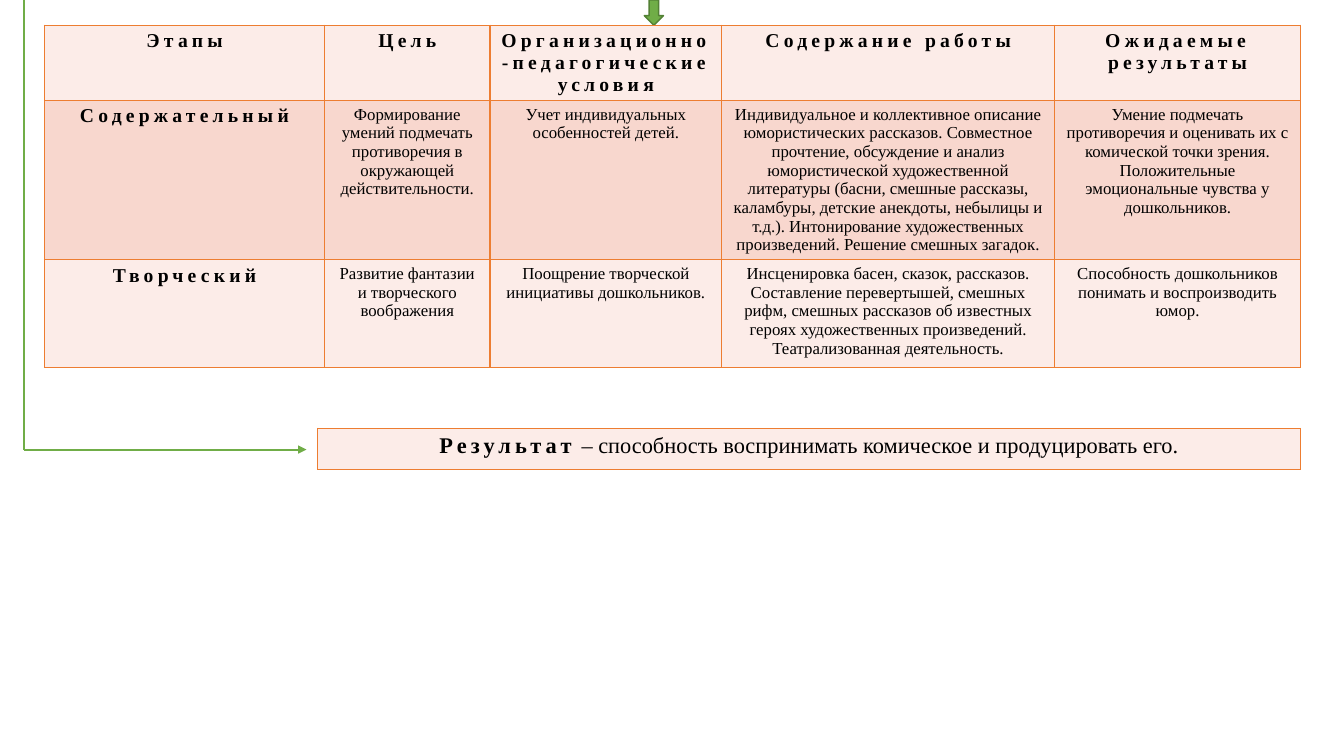
from pptx import Presentation
from pptx.dml.color import RGBColor
from pptx.enum.shapes import MSO_CONNECTOR as CONN, MSO_SHAPE as SHAPE
from pptx.enum.text import PP_ALIGN as ALIGN
from pptx.oxml.ns import qn
from pptx.util import Inches, Pt
from lxml.etree import SubElement

GREEN = RGBColor(0x70, 0xAD, 0x47)
DARK_GREEN = RGBColor(0x53, 0x81, 0x35)
ORANGE = RGBColor(0xED, 0x7D, 0x31)
PALE = RGBColor(0xFC, 0xEC, 0xE8)
PINK = RGBColor(0xF8, 0xD7, 0xCE)
BLACK = RGBColor(0, 0, 0)

STAGES = [
    ["Этапы", "Цель", "Организационно-педагогические условия",
     "Содержание работы", "Ожидаемые результаты"],
    ["Содержательный",
     "Формирование умений подмечать противоречия в окружающей действительности.",
     "Учет индивидуальных особенностей детей.",
     "Индивидуальное и коллективное описание юмористических рассказов. "
     "Совместное прочтение, обсуждение и анализ юмористической художественной "
     "литературы (басни, смешные рассказы, каламбуры, детские анекдоты, небылицы "
     "и т.д.). Интонирование художественных произведений. Решение смешных загадок.",
     "Умение подмечать противоречия и оценивать их с комической точки зрения. "
     "Положительные эмоциональные чувства у дошкольников."],
    ["Творческий",
     "Развитие фантазии и творческого воображения",
     "Поощрение творческой инициативы дошкольников.",
     "Инсценировка басен, сказок, рассказов. Составление перевертышей, смешных "
     "рифм, смешных рассказов об известных героях художественных произведений. "
     "Театрализованная деятельность.",
     "Способность дошкольников понимать и воспроизводить юмор."],
]


class SlideBuilder:
    font = "Times New Roman"

    def __init__(self, slide):
        self.s = slide

    def line(self, x1, y1, x2, y2, arrow=False):
        sp = self.s.shapes.add_connector(
            CONN.STRAIGHT, Inches(x1), Inches(y1), Inches(x2), Inches(y2))
        sp.line.color.rgb = GREEN
        sp.line.width = Pt(1.5)
        if arrow:
            SubElement(sp.line._get_or_add_ln(), qn("a:tailEnd"), type="triangle")
        SubElement(sp._element.spPr, qn("a:effectLst"))

    def down_arrow(self, x, y, w, h):
        sp = self.s.shapes.add_shape(
            SHAPE.DOWN_ARROW, Inches(x), Inches(y), Inches(w), Inches(h))
        sp.shadow.inherit = False
        sp.fill.solid()
        sp.fill.fore_color.rgb = GREEN
        sp.line.color.rgb = DARK_GREEN
        sp.line.width = Pt(1)

    def cell(self, cell, runs, fill):
        """Each run is (text, size, emphasised)."""
        tcPr = cell._tc.get_or_add_tcPr()
        for side in ("lnL", "lnR", "lnT", "lnB"):
            ln = SubElement(tcPr, qn(f"a:{side}"), w=str(Pt(1)))
            color = SubElement(ln, qn("a:solidFill"))
            SubElement(color, qn("a:srgbClr"), val=str(ORANGE))
        cell.fill.solid()
        cell.fill.fore_color.rgb = fill
        p = cell.text_frame.paragraphs[0]
        p.alignment = ALIGN.CENTER
        for text, size, strong in runs:
            r = p.add_run()
            r.text = text
            r.font.name = self.font
            r.font.size = Pt(size)
            r.font.bold = strong
            r.font.color.rgb = BLACK
            if strong:
                r.font._element.set("spc", "300")

    def table(self, x, y, widths, heights, rows, fills):
        frame = self.s.shapes.add_table(
            len(heights), len(widths), Inches(x), Inches(y),
            Inches(sum(widths)), Inches(sum(heights)))
        table = frame.table
        table.first_row = table.horz_banding = False
        for column, width in zip(table.columns, widths):
            column.width = Inches(width)
        for row, height, contents, fill in zip(table.rows, heights, rows, fills):
            row.height = Inches(height)
            for cell, runs in zip(row.cells, contents):
                self.cell(cell, runs, fill)


def main():
    prs = Presentation()
    prs.slide_width, prs.slide_height = Inches(13.33), Inches(7.5)
    b = SlideBuilder(prs.slides.add_slide(prs.slide_layouts[6]))

    # Arrow into the table and the line down the left side
    b.down_arrow(6.39, 0, 0.19, 0.25)
    b.line(0.24, 0, 0.24, 4.46)

    # Stages: the header row and the first column are emphasised
    rows = []
    for i, texts in enumerate(STAGES):
        rows.append([[(text, 14, True) if i == 0 or j == 0 else (text, 12, False)]
                     for j, text in enumerate(texts)])
    b.table(0.44, 0.25, [2.78, 1.64, 2.3, 3.3, 2.44], [0.74, 1.58, 1.07],
            rows, [PALE, PINK, PALE])

    # Result
    result = [("Результат", 16, True),
              (" – способность воспринимать комическое и продуцировать его.", 16, False)]
    b.table(3.15, 4.25, [9.75], [0.41], [[result]], [PALE])
    b.line(0.24, 4.46, 3.04, 4.46, arrow=True)

    prs.save("out.pptx")


if __name__ == "__main__":
    main()
